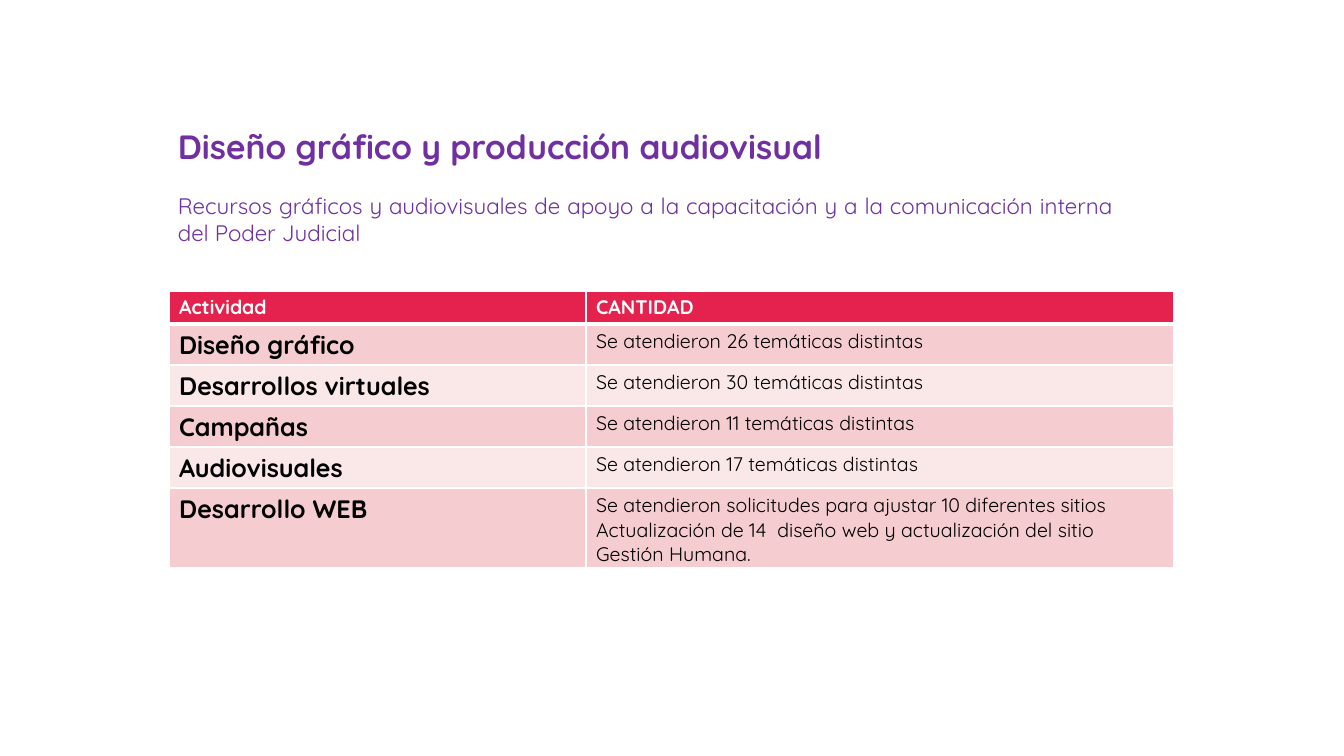
from lxml import etree
from pptx import Presentation
from pptx.dml.color import RGBColor
from pptx.enum import text
from pptx.oxml import ns
from pptx.util import Emu, Pt

FONT = "Quicksand"
COLORS = {
    "purple": "7030A0", "red": "E5224E", "pink": "F5CDD0",
    "pale": "FAE8E9", "white": "FFFFFF", "black": "000000",
}
TITLE = "Diseño gráfico y producción audiovisual"
SUBTITLE = ("Recursos gráficos y audiovisuales de apoyo a la capacitación "
            "y a la comunicación interna del Poder Judicial")
ROWS = [
    ("Actividad", "CANTIDAD"),
    ("Diseño gráfico", "Se atendieron 26 temáticas distintas"),
    ("Desarrollos virtuales", "Se atendieron 30 temáticas distintas"),
    ("Campañas", "Se atendieron 11 temáticas distintas"),
    ("Audiovisuales", "Se atendieron 17 temáticas distintas"),
    ("Desarrollo WEB",
     "Se atendieron solicitudes para ajustar 10 diferentes sitios\n"
     "Actualización de 14  diseño web y actualización del sitio Gestión Humana."),
]
COL_WIDTHS = [417, 588]
ROW_HEIGHTS = [33, 41, 41, 41, 41, 80]
TABLE_LEFT, TABLE_TOP = 169, 291


def px(n):
    return Emu(round(n * 914400 / 100.8))


def style(tf, size, color, bold):
    for p in tf.paragraphs:
        for r in p.runs:
            r.font.name = FONT
            r.font.size = Pt(size)
            r.font.bold = bold
            r.font.color.rgb = RGBColor.from_string(COLORS[color])


def add_text(s, box, words, size, bold):
    tf = s.shapes.add_textbox(*map(px, box)).text_frame
    tf.word_wrap = True
    tf.text = words
    style(tf, size, "purple", bold)
    return tf


def add_borders(cell, top, bottom):
    """Draw white cell borders; top and bottom are widths in points."""
    tc_pr = cell._tc.get_or_add_tcPr()
    for side, width in (("L", 1), ("R", 1), ("T", top), ("B", bottom)):
        ln = etree.SubElement(tc_pr, ns.qn(f"a:ln{side}"), w=str(Pt(width)))
        fill = etree.SubElement(ln, ns.qn("a:solidFill"))
        etree.SubElement(fill, ns.qn("a:srgbClr"), val=COLORS["white"])


def add_activity_table(s):
    frame = s.shapes.add_table(
        len(ROWS), len(COL_WIDTHS), px(TABLE_LEFT), px(TABLE_TOP),
        px(sum(COL_WIDTHS)), px(sum(ROW_HEIGHTS)))
    table = frame.table
    for col, width in zip(table.columns, COL_WIDTHS):
        col.width = px(width)
    for i, (row, height) in enumerate(zip(table.rows, ROW_HEIGHTS)):
        row.height = px(height)
        header = i == 0
        band = "red" if header else "pink" if i % 2 else "pale"
        for j, cell in enumerate(row.cells):
            cell.text_frame.text = ROWS[i][j]
            cell.margin_top = px(4 if header else 5)
            cell.margin_bottom = 0
            label = j == 0
            style(cell.text_frame, 18 if label and not header else 14,
                  "white" if header else "black", header or label)
            add_borders(cell, 3 if i == 1 else 1, 3 if header else 1)
            cell.fill.solid()
            cell.fill.fore_color.rgb = RGBColor.from_string(COLORS[band])


def main():
    prs = Presentation()
    prs.slide_width, prs.slide_height = px(1344), px(756)
    s = prs.slides.add_slide(prs.slide_layouts[6])
    add_text(s, (168, 121, 825, 50), TITLE, 24, True)
    add_activity_table(s)
    tf = add_text(s, (168, 187, 955, 65), SUBTITLE, 16, False)
    tf.paragraphs[0].alignment = text.PP_ALIGN.JUSTIFY
    prs.save("out.pptx")


if __name__ == "__main__":
    main()
